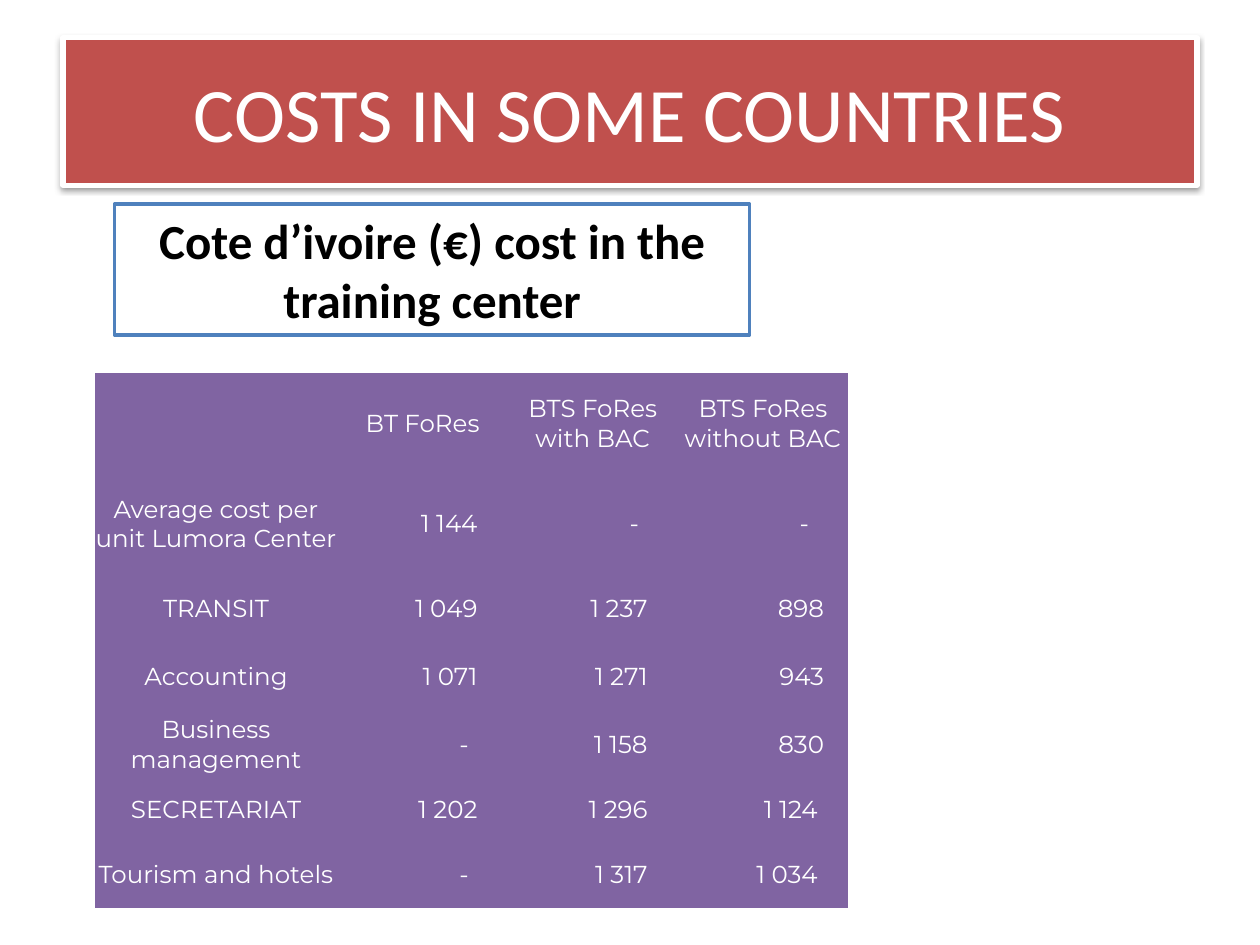
from dataclasses import dataclass

from lxml.etree import SubElement
from pptx import Presentation
from pptx.dml.color import RGBColor
from pptx.enum.shapes import MSO_SHAPE
from pptx.enum.text import MSO_ANCHOR, PP_ALIGN
from pptx.oxml.ns import qn
from pptx.util import Inches, Pt

COLORS = {
    "red": "C0504D",
    "blue": "4F81BD",
    "purple": "8064A2",
    "white": "FFFFFF",
    "black": "000000",
}
PLAIN = "{2D5ABB26-0587-4C30-8999-92F81FD0307C}"
COLS = [1.93, 1.35, 1.35, 1.35]
HEIGHTS = [0.8, 0.8, 0.54, 0.54, 0.54, 0.49, 0.54]
INSETS = {1: 0.31, 3: 0.19, 5: 0.24}
COSTS = [
    ["", "BT FoRes", "BTS FoRes with BAC", "BTS FoRes without BAC"],
    ["Average cost per unit Lumora Center", "1 144", "-", "-"],
    ["TRANSIT", "1 049", "1 237", "898"],
    ["Accounting", "1 071", "1 271", "943"],
    ["Business management", "-", "1 158", "830"],
    ["SECRETARIAT", "1 202", "1 296", "1 124"],
    ["Tourism and hotels", "-", "1 317", "1 034"],
]


@dataclass
class Box:
    text: str
    left: float
    top: float
    width: float
    height: float
    fill: str
    line: str
    weight: float
    size: int
    color: str
    bold: bool = False
    shadow: bool = False


BOXES = [
    Box("COSTS IN SOME COUNTRIES", 0.5, 0.3, 9, 1.17,
        "red", "white", 3, 44, "white", shadow=True),
    Box("Cote d’ivoire (€) cost in the training center", 0.91, 1.62, 5.04, 1.04,
        "white", "blue", 2, 28, "black", bold=True),
]


def paint(name: str) -> RGBColor:
    return RGBColor.from_string(COLORS[name])


def style(para, face: str, size: int, color: str, bold: bool = False) -> None:
    para.font.name = face
    para.font.size = Pt(size)
    para.font.bold = bold
    para.font.color.rgb = paint(color)


def add_shade(shape) -> None:
    effects = shape._element.spPr.find(qn("a:effectLst"))
    outer = SubElement(effects, qn("a:outerShdw"), blurRad=str(Pt(3.1)),
                       dist=str(Pt(1.6)), dir="5400000", rotWithShape="0")
    tint = SubElement(outer, qn("a:srgbClr"), val=COLORS["black"])
    SubElement(tint, qn("a:alpha"), val="38000")


def draw_box(slide, box: Box) -> None:
    shape = slide.shapes.add_shape(
        MSO_SHAPE.RECTANGLE, Inches(box.left), Inches(box.top),
        Inches(box.width), Inches(box.height))
    shape.shadow.inherit = False
    if box.shadow:
        add_shade(shape)
    shape.fill.solid()
    shape.fill.fore_color.rgb = paint(box.fill)
    shape.line.color.rgb = paint(box.line)
    shape.line.width = Pt(box.weight)
    frame = shape.text_frame
    frame.word_wrap = True
    frame.vertical_anchor = MSO_ANCHOR.MIDDLE
    para = frame.paragraphs[0]
    para.text = box.text
    para.alignment = PP_ALIGN.CENTER
    style(para, "Calibri", box.size, box.color, box.bold)


def fill_cell(cell, text: str, number: bool) -> None:
    cell.fill.solid()
    cell.fill.fore_color.rgb = paint("purple")
    cell.vertical_anchor = MSO_ANCHOR.MIDDLE
    cell.margin_left = cell.margin_top = cell.margin_bottom = 0
    cell.margin_right = Inches(INSETS[len(text)] if number else 0)
    para = cell.text_frame.paragraphs[0]
    para.text = text
    para.alignment = PP_ALIGN.RIGHT if number else PP_ALIGN.CENTER
    style(para, "Montserrat", 14, "white")


def draw_table(slide) -> None:
    frame = slide.shapes.add_table(
        len(HEIGHTS), len(COLS), Inches(0.75), Inches(2.96),
        Inches(sum(COLS)), Inches(sum(HEIGHTS)))
    table = frame.table
    table.first_row = table.horz_banding = False
    table._tbl.tblPr.find(qn("a:tableStyleId")).text = PLAIN
    for col, width in zip(table.columns, COLS):
        col.width = Inches(width)
    for row, height in zip(table.rows, HEIGHTS):
        row.height = Inches(height)
    for i, costs in enumerate(COSTS):
        for j, text in enumerate(costs):
            fill_cell(table.cell(i, j), text, i > 0 and j > 0)


def main() -> None:
    deck = Presentation()
    deck.slide_width = Inches(10)
    deck.slide_height = Inches(7.5)
    slide = deck.slides.add_slide(deck.slide_layouts[6])
    draw_table(slide)
    for box in BOXES:
        draw_box(slide, box)
    deck.save("out.pptx")


if __name__ == "__main__":
    main()
